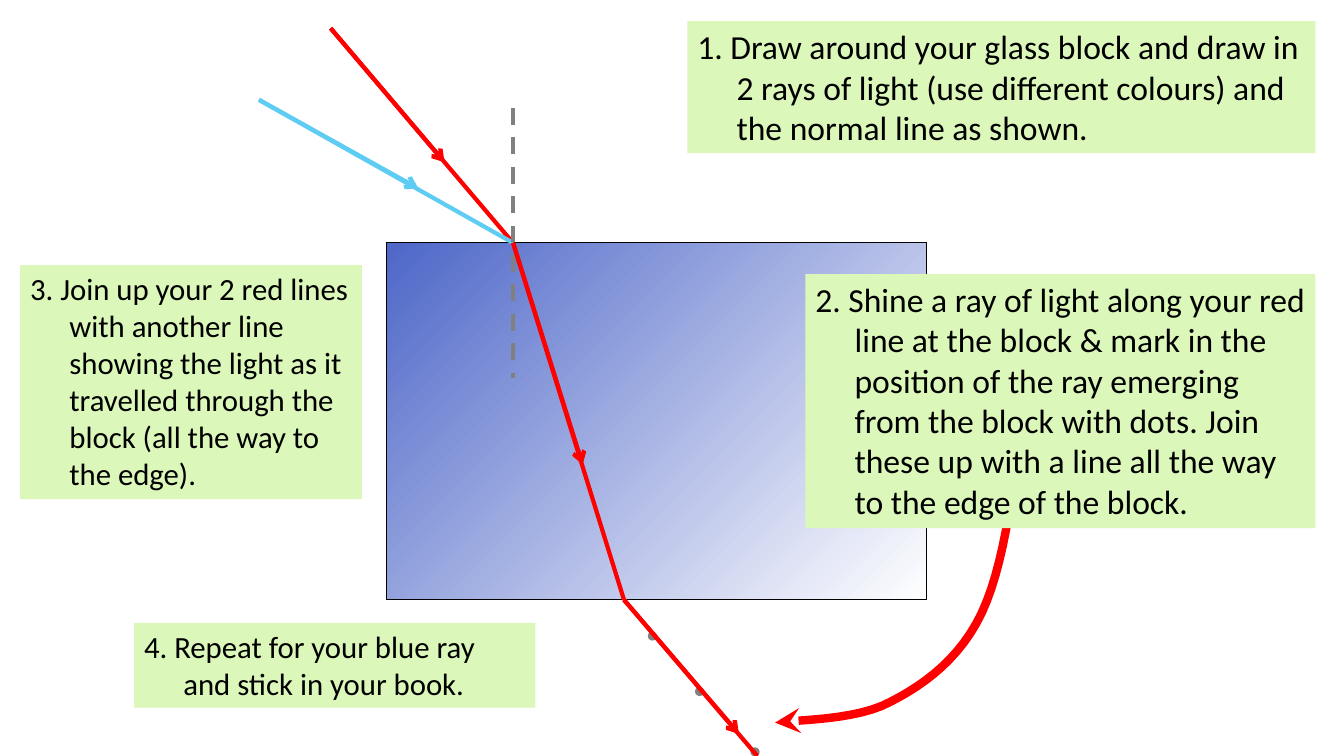
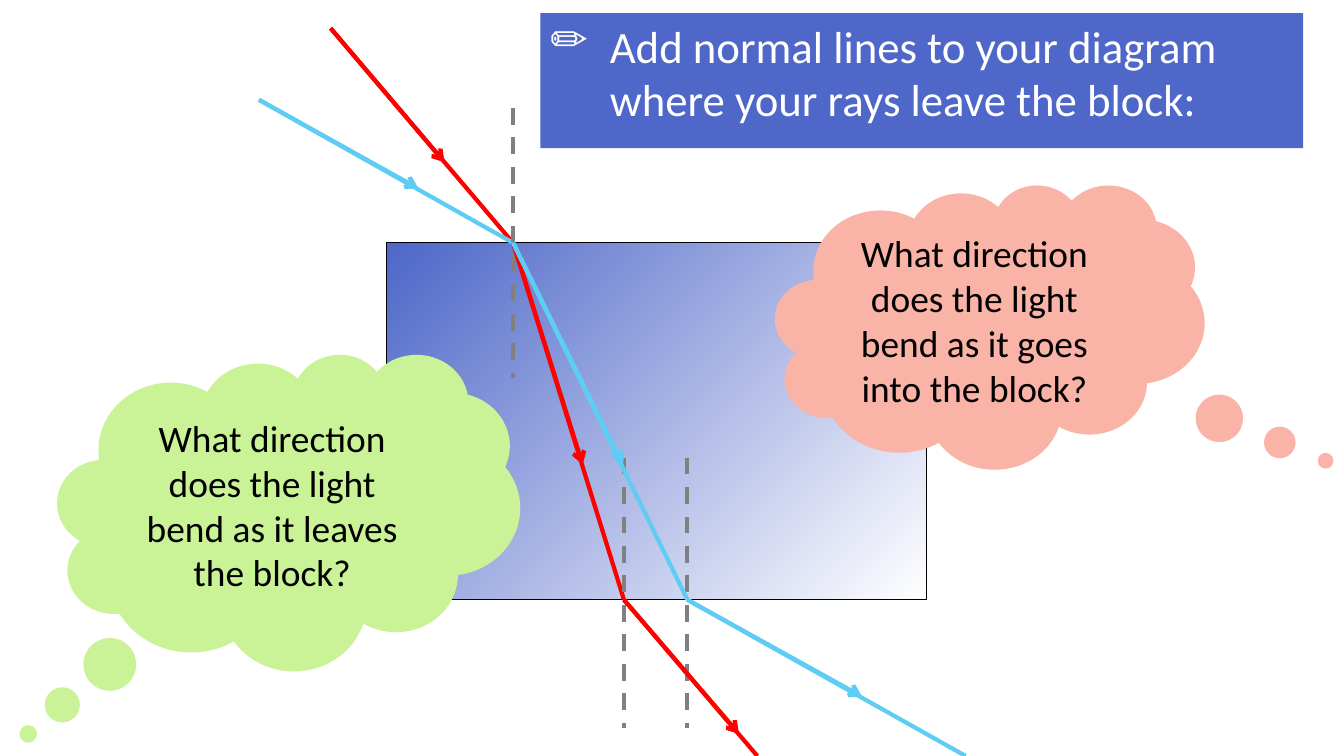
import lxml.etree
import pptx
import pptx.dml.color
import pptx.enum.dml
import pptx.enum.shapes
import pptx.enum.text
import pptx.oxml.ns
import pptx.util

Pt = pptx.util.Pt
RGB = pptx.dml.color.RGBColor
KIND = pptx.enum.shapes.MSO_SHAPE
ALIGN = pptx.enum.text.PP_ALIGN
ANCHOR = pptx.enum.text.MSO_ANCHOR
qn = pptx.oxml.ns.qn

FONT = "Calibri"
RED = RGB(0xFF, 0x00, 0x00)
BLUE = RGB(0x5E, 0xCC, 0xF3)
NAVY = RGB(0x4E, 0x67, 0xC8)
GREY = RGB(0x80, 0x80, 0x80)
PALE = RGB(0xDC, 0xF7, 0xBA)
GREEN = RGB(0xCA, 0xF2, 0x97)
PINK = RGB(0xF9, 0xB3, 0xA7)
BLACK = RGB(0x00, 0x00, 0x00)
WHITE = RGB(0xFF, 0xFF, 0xFF)

TOP, BASE, FLOOR = 173.5, 428.4, 540
BLOCK = (275.8, TOP, 385.9, BASE - TOP)
ENTRY = (366.5, TOP)
RED_EXIT = (445.7, BASE)
BLUE_EXIT = (491, BASE)
REACH = 96.5
LOW_MID = 423.4

RAYS = {
    "red in": (RED, (236.2, 20.2), (317.5, 115.9), ENTRY),
    "blue in": (BLUE, (185, 71.3), (298.8, 134.6), ENTRY),
    "red through": (RED, ENTRY, (416.2, 331.9), RED_EXIT),
    "blue through": (BLUE, ENTRY, (445, 331.9), BLUE_EXIT),
    "red out": (RED, RED_EXIT, (527.8, 524.2), (541, FLOOR)),
    "blue out": (BLUE, BLUE_EXIT, (615.6, 497.5), (689.8, FLOOR)),
}

STEPS = [
    ("1. Draw around your glass block and draw in 2 rays of light (use "
     "different colours) and the normal line as shown.",
     (491, 15.1, 448.6, 94.3), 24),
    ("2. Shine a ray of light along your red line at the block & mark in the "
     "position of the ray emerging from the block with dots. Join these up "
     "with a line all the way to the edge of the block.",
     (575.3, 195.8, 364.3, 181.6), 24),
    ("3. Join up your 2 red lines with another line showing the light as it "
     "travelled through the block (all the way to the edge).",
     (14.4, 189.4, 244.1, 167.2), 22),
    ("4. Repeat for your blue ray and stick in your book.",
     (95.8, 445, 286.6, 60.5), 22),
]
HANG = 28.1

DOTS = [(499.7, 493.9), (466, 454.3), (539.3, 537.1)]
DOT = 5.8

CURVE = [
    [(728.6, 308.9), (722.9, 357.1), (716.4, 405.4), (701.3, 437.8)],
    [(701.3, 437.8), (686.2, 469.4), (661.7, 488.2), (636.5, 501.1)],
    [(636.5, 501.1), (612, 514.8), (567.4, 514.1), (553.7, 516.2)],
]
CUTS = 12

TITLE = "Add normal lines to your diagram where your rays leave the block:"
BAND = (385.9, 9.4, 545, 96.5)
TAB = 42.5

CLOUDS = [
    ("What direction does the light bend as it goes into the block?",
     (553.7, 131.8, 306.7, 203), (0.782, 0.472), PINK),
    ("What direction does the light bend as it leaves the block?",
     (41, 252.7, 330.5, 226.1), (-0.563, 0.701), GREEN),
]


def pts(vals):
    return [Pt(v) for v in vals]


def add_tip(line, kind):
    tip = lxml.etree.SubElement(line._get_or_add_ln(), qn("a:tailEnd"))
    tip.set("type", kind)


def write(frame, text, size, color, align, anchor):
    frame.word_wrap = True
    frame.auto_size = pptx.enum.text.MSO_AUTO_SIZE.NONE
    frame.vertical_anchor = anchor
    para = frame.paragraphs[0]
    para.alignment = align
    run = para.add_run()
    run.text = text
    run.font.size = Pt(size)
    run.font.name = FONT
    run.font.color.rgb = color
    return para


def hang(para, width):
    props = para._p.get_or_add_pPr()
    props.set("marL", str(Pt(width)))
    props.set("indent", str(-Pt(width)))
    return props


def add_form(slide, kind, box, fill):
    form = slide.shapes.add_shape(kind, *pts(box))
    form.shadow.inherit = False
    form.fill.solid()
    form.fill.fore_color.rgb = fill
    form.line.fill.background()
    return form


def add_line(slide, start, end, color):
    line = slide.shapes.add_connector(
        pptx.enum.shapes.MSO_CONNECTOR.STRAIGHT, *pts(start + end))
    line.line.color.rgb = color
    line.line.width = Pt(3)
    lxml.etree.SubElement(line._element.spPr, qn("a:effectLst"))
    return line


def add_ray(slide, name):
    color, start, head, end = RAYS[name]
    add_tip(add_line(slide, start, head, color).line, "arrow")
    add_line(slide, start, end, color)


def add_normal(slide, x, mid):
    line = add_line(slide, (x, mid - REACH), (x, mid + REACH), GREY)
    line.line.dash_style = pptx.enum.dml.MSO_LINE.DASH


def add_block(slide):
    block = add_form(slide, KIND.RECTANGLE, BLOCK, NAVY)
    block.fill.gradient()
    block.fill.gradient_angle = 315
    for stop, color in zip(block.fill.gradient_stops, (NAVY, WHITE)):
        stop.color.rgb = color
    block.line.color.rgb = BLACK
    block.line.width = Pt(0.75)


def add_base(slide):
    add_block(slide)
    add_ray(slide, "red in")
    add_ray(slide, "blue in")
    add_normal(slide, *ENTRY)


def add_step(slide, step):
    text, box, size = step
    form = add_form(slide, KIND.RECTANGLE, box, PALE)
    hang(write(form.text_frame, text, size, BLACK, ALIGN.LEFT, ANCHOR.TOP), HANG)


def blend(knots, t):
    parts = ((1 - t) ** 3, 3 * t * (1 - t) ** 2, 3 * t * t * (1 - t), t ** 3)
    return [Pt(sum(p * knot[i] for p, knot in zip(parts, knots))) for i in (0, 1)]


def add_curve(slide):
    trail = [blend(knots, n / CUTS) for knots in CURVE for n in range(1, CUTS + 1)]
    pen = slide.shapes.build_freeform(*pts(CURVE[0][0]), scale=1.0)
    pen.add_line_segments(trail, close=False)
    curve = pen.convert_to_shape()
    curve.shadow.inherit = False
    curve.fill.background()
    curve.line.color.rgb = RED
    curve.line.width = Pt(6)
    add_tip(curve.line, "stealth")


def add_dot(slide, x, y):
    dot = add_form(slide, KIND.OVAL, (x - DOT / 2, y - DOT / 2, DOT, DOT), GREY)
    dot.line.color.rgb = GREY
    dot.line.width = Pt(0.75)


def set_title(slide):
    title = slide.shapes.title
    title.left, title.top, title.width, title.height = pts(BAND)
    title.fill.solid()
    title.fill.fore_color.rgb = NAVY
    para = write(title.text_frame, TITLE, 32, WHITE, ALIGN.LEFT, ANCHOR.TOP)
    mark = lxml.etree.SubElement(hang(para, TAB), qn("a:buChar"))
    mark.set("char", "✏")


def add_cloud(slide, text, box, tail, fill):
    cloud = add_form(slide, KIND.CLOUD_CALLOUT, box, fill)
    for i, value in enumerate(tail):
        cloud.adjustments[i] = value
    write(cloud.text_frame, text, 26.7, BLACK, ALIGN.CENTER, ANCHOR.MIDDLE)


def draw_steps(deck):
    slide = deck.slides.add_slide(deck.slide_layouts[6])
    add_base(slide)
    add_curve(slide)
    for step in STEPS:
        add_step(slide, step)
    add_ray(slide, "red through")
    for x, y in DOTS:
        add_dot(slide, x, y)
    add_ray(slide, "red out")


def draw_bends(deck):
    slide = deck.slides.add_slide(deck.slide_layouts[5])
    set_title(slide)
    add_base(slide)
    add_ray(slide, "red through")
    add_ray(slide, "blue out")
    for x, _ in (BLUE_EXIT, RED_EXIT):
        add_normal(slide, x, LOW_MID)
    add_ray(slide, "blue through")
    for cloud in CLOUDS:
        add_cloud(slide, *cloud)
    add_ray(slide, "red out")


def main():
    deck = pptx.Presentation()
    deck.slide_width, deck.slide_height = Pt(960), Pt(FLOOR)
    draw_steps(deck)
    draw_bends(deck)
    deck.save("out.pptx")


if __name__ == "__main__":
    main()
